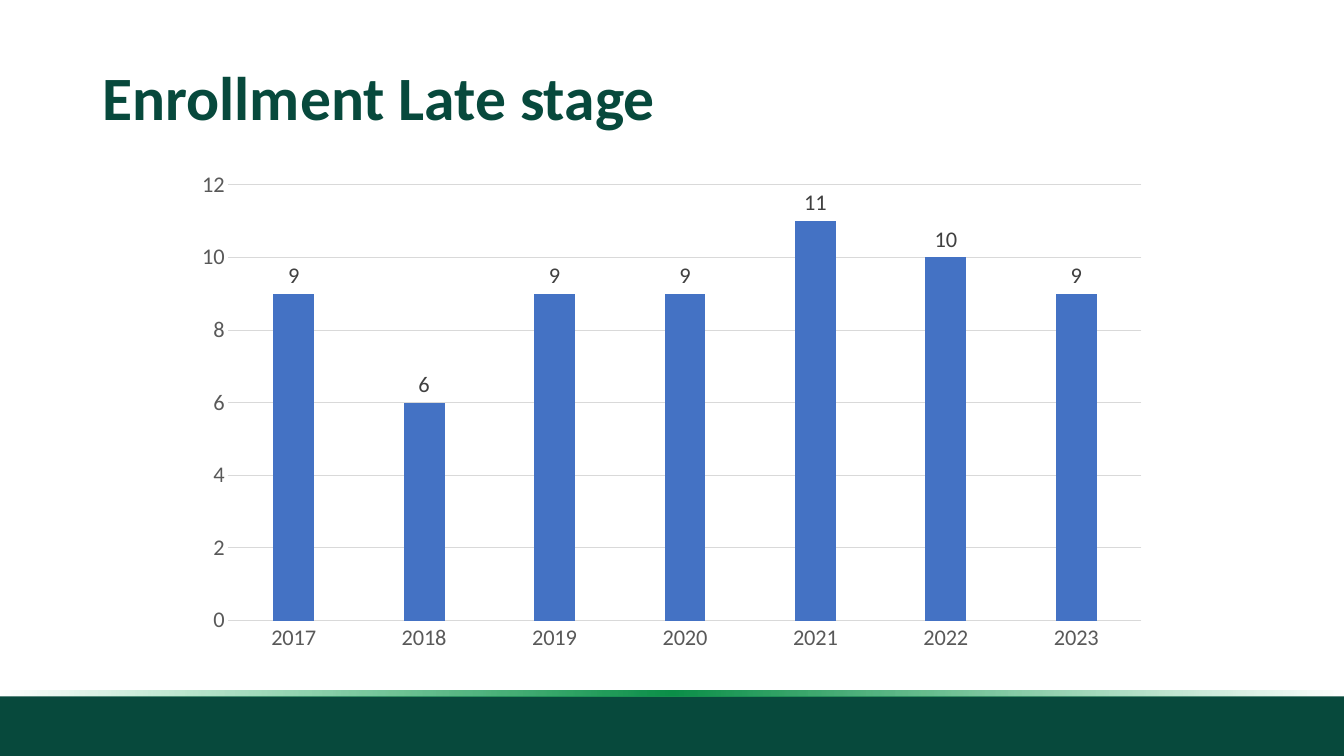
from dataclasses import dataclass

from lxml import etree
from pptx import Presentation
from pptx.chart.data import CategoryChartData
from pptx.dml.color import RGBColor
from pptx.enum.chart import XL_CHART_TYPE, XL_LABEL_POSITION, XL_TICK_MARK
from pptx.enum.shapes import MSO_SHAPE
from pptx.enum.text import MSO_ANCHOR, PP_ALIGN
from pptx.oxml.ns import qn
from pptx.util import Cm, Pt

COLUMNS = XL_CHART_TYPE.COLUMN_CLUSTERED
OUTSIDE_END = XL_LABEL_POSITION.OUTSIDE_END
NO_TICK = XL_TICK_MARK.NONE
RECTANGLE = MSO_SHAPE.RECTANGLE
MIDDLE = MSO_ANCHOR.MIDDLE
LEFT = PP_ALIGN.LEFT
TITLE_ONLY = 5


@dataclass(frozen=True)
class Theme:
    font: str = "Calibri"
    dark_green: str = "07493C"
    column: str = "4472C4"
    axis_text: str = "595959"
    label_text: str = "404040"
    grid: str = "D9D9D9"
    # Position in percent, colour, opacity in percent
    glow: tuple = ((0, "0D9D4F", 0), (50, "0C9049", 100), (100, "0FAB56", 0))
    title_size: int = 44
    chart_size: int = 16
    hairline: float = 0.75


THEME = Theme()
SLIDE_WIDTH, SLIDE_HEIGHT = Cm(33.87), Cm(19.05)
ENROLLMENT = {"2017": 9, "2018": 6, "2019": 9, "2020": 9,
              "2021": 11, "2022": 10, "2023": 9}


def style_font(font, size, color, bold=False):
    font.name = THEME.font
    font.size = Pt(size)
    font.bold = bold
    font.color.rgb = RGBColor.from_string(color)


def style_line(line):
    line.color.rgb = RGBColor.from_string(THEME.grid)
    line.width = Pt(THEME.hairline)


def add_band(slide, top, height):
    band = slide.shapes.add_shape(RECTANGLE, 0, top, SLIDE_WIDTH, height)
    band.shadow.inherit = False
    band.line.fill.background()
    return band


def fill_with_glow(band):
    band.fill.gradient()
    band.fill.gradient_angle = 180
    stops = band.fill._fill._gradFill.find(qn("a:gsLst"))
    for stop in list(stops):
        stops.remove(stop)
    for position, color, opacity in THEME.glow:
        stop = etree.SubElement(stops, qn("a:gs"), pos=str(position * 1000))
        shade = etree.SubElement(stop, qn("a:srgbClr"), val=color)
        etree.SubElement(shade, qn("a:alpha"), val=str(opacity * 1000))


def add_footer(slide):
    footer = add_band(slide, Cm(17.55), Cm(1.5))
    footer.fill.solid()
    footer.fill.fore_color.rgb = RGBColor.from_string(THEME.dark_green)
    fill_with_glow(add_band(slide, Cm(17.4), Cm(0.14)))


def set_title(slide, text):
    title = slide.shapes.title
    title.left, title.top = Cm(2.33), Cm(1.01)
    title.width, title.height = Cm(29.21), Cm(3.03)
    frame = title.text_frame
    frame.word_wrap = True
    frame.vertical_anchor = MIDDLE
    paragraph = frame.paragraphs[0]
    paragraph.alignment = LEFT
    paragraph.line_spacing = 0.9
    run = paragraph.add_run()
    run.text = text
    style_font(run.font, THEME.title_size, THEME.dark_green, bold=True)


def style_axis(axis):
    axis.major_tick_mark = axis.minor_tick_mark = NO_TICK
    style_font(axis.tick_labels.font, THEME.chart_size, THEME.axis_text)


def add_enrollment_chart(slide):
    data = CategoryChartData()
    data.categories = list(ENROLLMENT)
    data.add_series("Series 1", list(ENROLLMENT.values()))
    chart = slide.shapes.add_chart(
        COLUMNS, Cm(4.6), Cm(4.06), Cm(24.66), Cm(12.62), data).chart
    chart.has_title = chart.has_legend = False
    style_font(chart.font, THEME.chart_size, THEME.axis_text)

    # Axes
    years, counts = chart.category_axis, chart.value_axis
    style_axis(years)
    style_line(years.format.line)
    style_axis(counts)
    counts.minimum_scale, counts.maximum_scale, counts.major_unit = 0, 12, 2
    counts.format.line.fill.background()
    counts.has_major_gridlines = True
    style_line(counts.major_gridlines.format.line)

    # Columns and their values
    plot = chart.plots[0]
    plot.vary_by_categories = False
    plot.gap_width, plot.overlap = 219, -27
    enrolled = plot.series[0]
    enrolled.format.fill.solid()
    enrolled.format.fill.fore_color.rgb = RGBColor.from_string(THEME.column)
    labels = enrolled.data_labels
    labels.show_value = True
    labels.position = OUTSIDE_END
    style_font(labels.font, THEME.chart_size, THEME.label_text)


def main():
    deck = Presentation()
    deck.slide_width, deck.slide_height = SLIDE_WIDTH, SLIDE_HEIGHT
    slide = deck.slides.add_slide(deck.slide_layouts[TITLE_ONLY])
    add_footer(slide)
    set_title(slide, "Enrollment Late stage")
    add_enrollment_chart(slide)
    deck.save("out.pptx")


if __name__ == "__main__":
    main()
